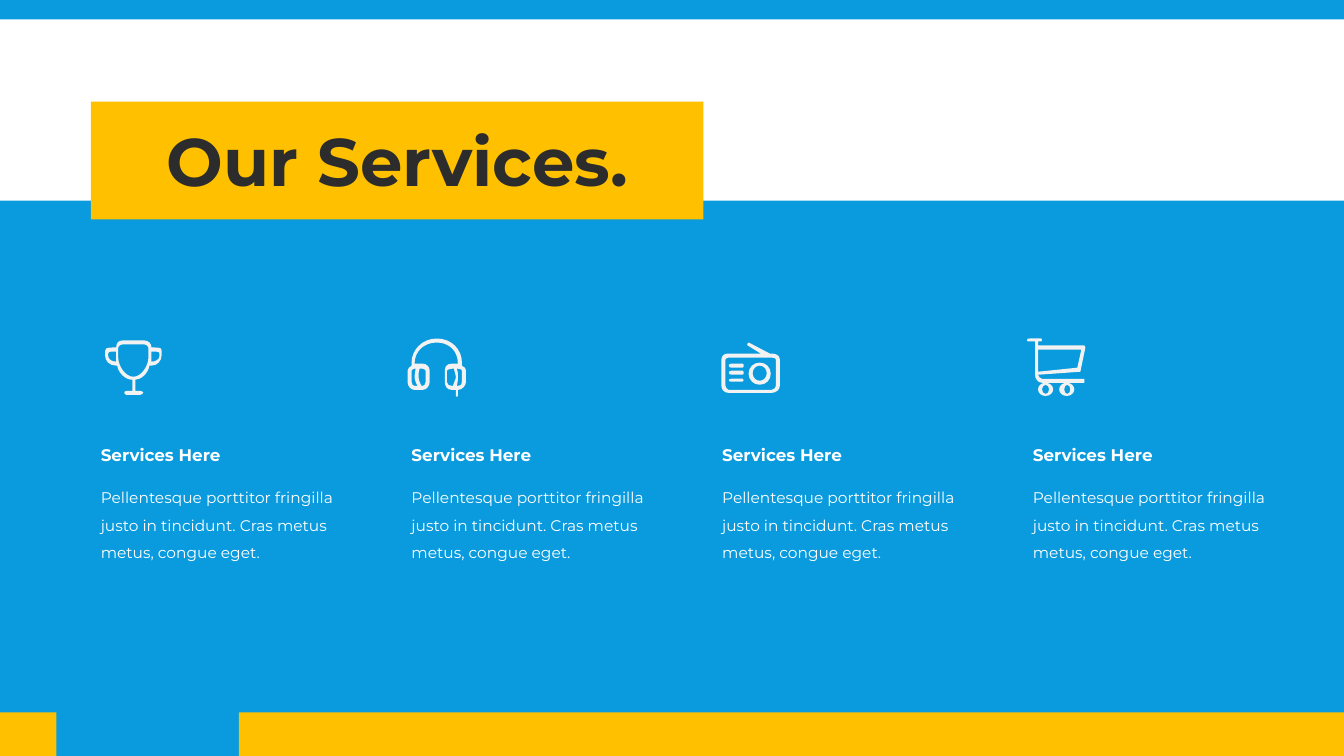
from lxml import etree
from pptx import Presentation
from pptx.dml.color import RGBColor
from pptx.enum.shapes import MSO_SHAPE
from pptx.enum.text import MSO_AUTO_SIZE, PP_ALIGN
from pptx.oxml.ns import qn
from pptx.util import Cm, Pt

RECTANGLE = MSO_SHAPE.RECTANGLE
GROW = MSO_AUTO_SIZE.SHAPE_TO_FIT_TEXT
LEFT, CENTER = PP_ALIGN.LEFT, PP_ALIGN.CENTER

BLUE = RGBColor(0x09, 0x9B, 0xDD)
YELLOW = RGBColor(0xFF, 0xC0, 0x00)
WHITE = RGBColor(0xFF, 0xFF, 0xFF)
PALE = RGBColor(0xF2, 0xF2, 0xF2)
DARK = RGBColor(0x2C, 0x2C, 0x2C)

FONT = "Montserrat"
TITLE = {"size": Pt(48), "bold": True, "name": FONT}
HEADING = {"size": Pt(12), "bold": True, "name": FONT}
BODY = {"size": Pt(11), "bold": False, "name": FONT}

SLIDE_W, SLIDE_H = 33.87, 19.05
ICON_UNIT = Cm(2.54) / 100  # icon outlines are drawn in hundredths of an inch
FINENESS = 10  # steps within one icon unit


def oval(left, top, right, bottom):
    """Outline of an ellipse made of four curves."""
    x, y = (left + right) / 2, (top + bottom) / 2
    dx, dy = (right - left) * 0.28, (bottom - top) * 0.28
    return [(left, y),
            (left, y - dy, x - dx, top, x, top),
            (x + dx, top, right, y - dy, right, y),
            (right, y + dy, x + dx, bottom, x, bottom),
            (x - dx, bottom, left, y + dy, left, y)]


def dial_line(top, bottom):
    """Outline of a short bar with round ends."""
    return [(10, top), (21, top), (22.5, top, 22.5, bottom, 21, bottom),
            (10, bottom), (6.5, bottom, 6.5, top, 10, top)]


# Outlines: a pair is a corner, six numbers are a cubic curve
TROPHY = [
    [(46, 7), (46, 3, 43, 0, 39, 0), (17, 0), (13, 0, 11, 3, 11, 7),
     (-1, 7, 0, 7, 0, 15), (0, 20, 4, 25, 11, 25), (12, 25),
     (13, 32, 20, 39, 27, 39), (27, 50), (21, 50), (20, 50, 19, 51, 19, 52),
     (19, 52, 20, 54, 21, 54), (35, 54), (36, 54, 38, 52, 38, 52),
     (38, 51, 36, 50, 35, 50), (30, 50), (30, 39), (36, 39, 43, 32, 44, 25),
     (46, 25), (52, 25, 56, 20, 56, 15), (56, 7, 58, 7, 46, 7)],
    [(11, 21), (7, 21, 3, 19, 3, 15), (3, 11, 3, 11, 11, 11)],
    [(43, 17), (43, 25, 36, 36, 28, 36), (20, 36, 13, 25, 13, 17), (13, 7),
     (13, 5, 16, 4, 17, 4), (39, 4), (40, 4, 43, 5, 43, 7)],
    [(46, 21), (46, 11), (54, 11, 54, 11, 54, 15), (54, 19, 50, 21, 46, 21)],
]
HEADPHONES = [
    [(54, 27), (54, 25, 54, 25, 54, 24), (54, 11, 44, 0, 29, 0),
     (15, 0, 4, 11, 4, 24), (4, 27), (2, 28, 0, 30, 0, 32), (0, 43),
     (0, 47, 3, 51, 7, 51), (15, 51), (19, 51, 22, 47, 22, 43), (22, 32),
     (22, 28, 19, 25, 15, 25), (7, 25), (7, 13, 16, 4, 29, 4),
     (41, 4, 50, 12, 50, 25), (44, 25), (39, 25, 37, 28, 37, 32), (37, 43),
     (37, 47, 39, 51, 44, 51), (48, 51), (48, 56), (48, 56, 48, 58, 49, 58),
     (50, 58, 50, 56, 50, 56), (50, 51), (54, 51, 58, 47, 58, 43), (58, 32),
     (58, 30, 57, 28, 54, 27)],
    [(12, 30), (15, 30), (16, 30, 18, 31, 18, 32), (18, 43),
     (18, 46, 16, 47, 15, 47), (14, 47), (12, 44, 11, 40, 11, 38),
     (11, 35, 11, 32, 12, 30)],
    [(8, 30), (8, 32, 7, 35, 7, 38), (7, 40, 8, 44, 10, 47), (7, 47),
     (6, 47, 4, 46, 4, 43), (4, 32), (4, 31, 6, 30, 7, 30)],
    [(45, 47), (44, 47), (42, 47, 39, 46, 39, 43), (39, 32),
     (39, 31, 42, 30, 44, 30), (46, 30), (46, 32, 48, 35, 48, 38),
     (48, 40, 46, 44, 45, 47)],
    [(54, 43), (54, 46, 53, 47, 50, 47), (49, 47), (50, 44, 50, 40, 50, 38),
     (50, 35, 50, 32, 49, 30), (50, 30), (53, 30, 54, 31, 54, 32)],
]
RADIO = [
    [(50, 11), (48, 11), (27, 0), (27, 0, 26, 0, 26, 1), (25, 1, 26, 3, 26, 3),
     (39, 11), (7, 11), (3, 11, 0, 13, 0, 17), (0, 43), (0, 47, 3, 50, 7, 50),
     (50, 50), (54, 50, 58, 47, 58, 43), (58, 17), (58, 13, 54, 11, 50, 11)],
    [(54, 43), (54, 44, 53, 47, 50, 47), (7, 47), (6, 47, 4, 44, 4, 43),
     (4, 17), (4, 16, 6, 15, 7, 15), (50, 15), (53, 15, 54, 16, 54, 17)],
    oval(27, 20, 49, 42), oval(31, 23, 45, 38),
    dial_line(21, 25), dial_line(28, 32), dial_line(36, 39),
]
CART = [
    [(15, 40), (14, 40, 11, 38, 11, 36), (53, 33), (58, 9), (57, 7), (11, 7),
     (11, 3), (14, 3), (14, 3, 15, 3, 15, 2), (15, 0, 14, 0, 14, 0), (3, 0),
     (1, 0, 0, 0, 0, 2), (0, 3, 1, 3, 3, 3), (8, 3), (8, 36),
     (8, 40, 11, 44, 15, 44), (57, 44), (57, 40)],
    [(11, 11), (54, 11), (50, 29), (11, 33)],
    oval(11, 44, 26, 57), oval(15, 46, 22, 55),
    oval(32, 44, 47, 57), oval(37, 46, 43, 55),
]

# Icon outline, its offset from the column's left and top
SERVICES = [(TROPHY, 0.36, 0.05), (HEADPHONES, 0.15, 0),
            (RADIO, 0.23, 0.1), (CART, 0.1, 0)]
SERVICE_NAME = "Services Here"
SERVICE_TEXT = ("Pellentesque porttitor fringilla justo in tincidunt. "
                "Cras metus metus, congue eget.")


def paint(shape, color):
    shape.fill.solid()
    shape.fill.fore_color.rgb = color
    shape.line.fill.background()
    shape.shadow.inherit = False


def add_band(slide, left, top, width, height, color):
    band = slide.shapes.add_shape(RECTANGLE, Cm(left), Cm(top), Cm(width), Cm(height))
    paint(band, color)


def add_text(slide, left, top, width, height, text, font_values, color,
             alignment=LEFT, line_spacing=1.0):
    frame = slide.shapes.add_textbox(Cm(left), Cm(top), Cm(width), Cm(height)).text_frame
    frame.word_wrap = True
    frame.auto_size = GROW
    paragraph = frame.paragraphs[0]
    paragraph.alignment = alignment
    paragraph.line_spacing = line_spacing
    run = paragraph.add_run()
    run.text = text
    for attribute, value in font_values.items():
        setattr(run.font, attribute, value)
    run.font.color.rgb = color


def bend(icon, segments):
    """Turn the straight segments that have control points into cubic curves."""
    lines = list(icon.element.iter(qn("a:lnTo")))
    for line, segment in zip(lines, segments):
        if len(segment) == 6:
            line.tag = qn("a:cubicBezTo")
            for i in (0, 2):
                control = etree.Element(qn("a:pt"), x=str(segment[i]), y=str(segment[i + 1]))
                line.insert(i // 2, control)


def add_icon(slide, left, top, outlines):
    contours = [[tuple(round(n * FINENESS) for n in segment) for segment in outline]
                for outline in outlines]
    pen = slide.shapes.build_freeform(*contours[0][0], scale=ICON_UNIT / FINENESS)
    for number, (start, *segments) in enumerate(contours):
        if number:
            pen.move_to(*start)
        pen.add_line_segments([segment[-2:] for segment in segments], close=True)
    icon = pen.convert_to_shape(Cm(left), Cm(top))
    bend(icon, [segment for contour in contours for segment in contour[1:]])
    paint(icon, PALE)


def add_backdrop(slide, width, height):
    slide.background.fill.solid()
    slide.background.fill.fore_color.rgb = BLUE
    add_band(slide, 0, 0.49, width, 4.57, WHITE)
    footer_h = 1.1
    for left, right in [(6.02, width), (0, 1.42)]:
        add_band(slide, left, height - footer_h, right - left, footer_h, YELLOW)


def add_title(slide, left, top, width, height):
    add_band(slide, left, top, width, height, YELLOW)
    inset = 0.3
    add_text(slide, left + inset, top + 0.32, width - 2 * inset, height - 0.66,
             "Our Services.", TITLE, DARK, CENTER)


def add_service(slide, left, top, width, icon, icon_dx, icon_dy):
    add_icon(slide, left + icon_dx, top + icon_dy, icon)
    add_text(slide, left, top + 2.29, width, 1.02, SERVICE_NAME, HEADING, WHITE,
             line_spacing=1.5)
    add_text(slide, left, top + 3.41, width, 2.36, SERVICE_TEXT, BODY, WHITE,
             line_spacing=1.5)


def main():
    deck = Presentation()
    deck.slide_width, deck.slide_height = Cm(SLIDE_W), Cm(SLIDE_H)
    slide = deck.slides.add_slide(deck.slide_layouts[6])
    margin, column_pitch = 2.29, 7.83
    add_backdrop(slide, SLIDE_W, SLIDE_H)
    add_title(slide, margin, 2.56, 15.44, 2.97)
    # Four service columns
    for column, service in enumerate(SERVICES):
        add_service(slide, margin + column * column_pitch, 8.53, 6.5, *service)
    deck.save("out.pptx")


if __name__ == "__main__":
    main()
